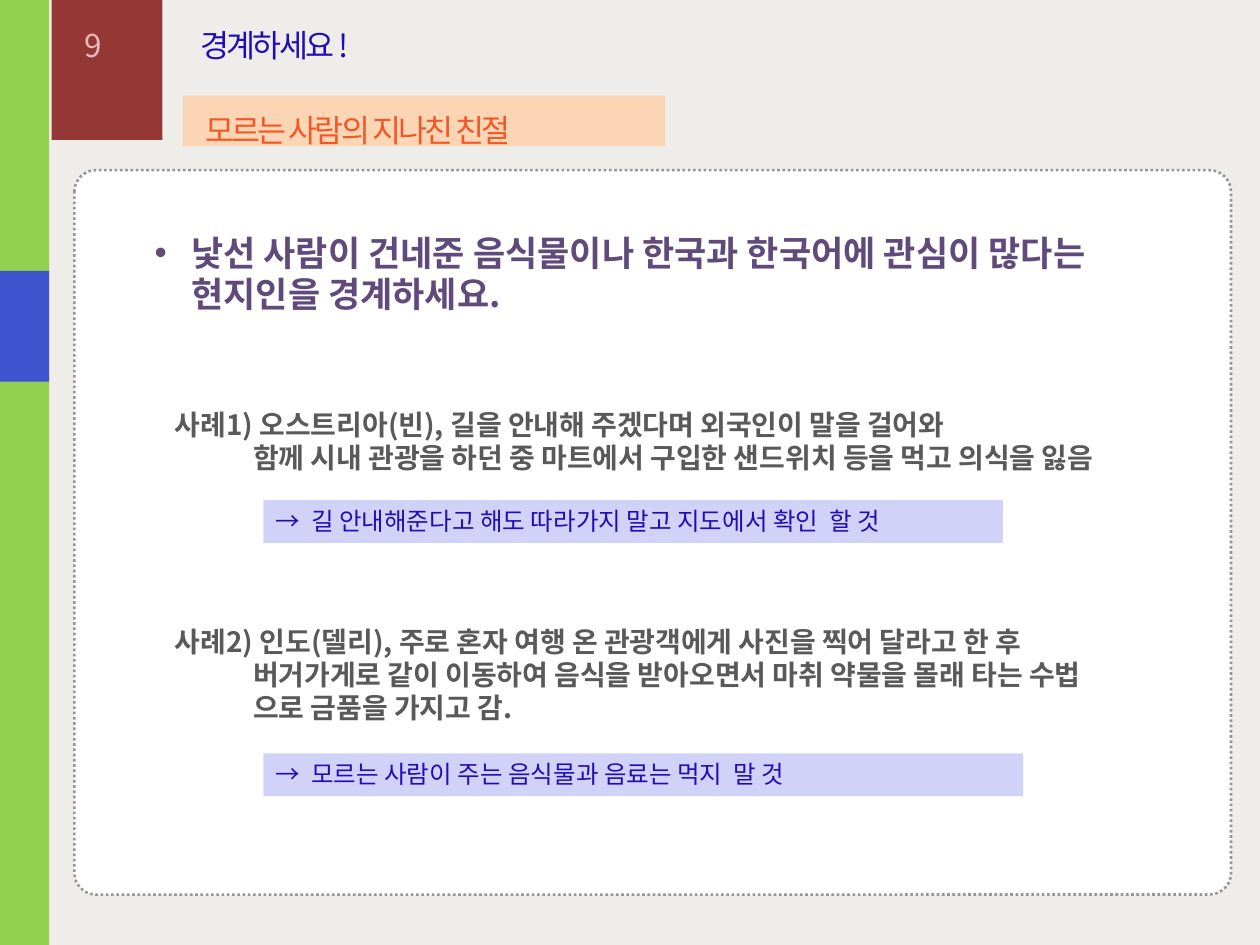
"""Build a travel safety slide about overly friendly strangers."""
from dataclasses import dataclass

from lxml.etree import SubElement
from pptx import Presentation
from pptx.dml.color import RGBColor
from pptx.enum.dml import MSO_LINE
from pptx.enum.shapes import MSO_SHAPE
from pptx.enum.text import MSO_ANCHOR, MSO_AUTO_SIZE, PP_ALIGN
from pptx.oxml.ns import qn
from pptx.util import Inches, Pt


@dataclass(frozen=True)
class Theme:
    """Hold the colours, type sizes and font of the slide."""
    font: str = "Noto Sans CJK KR"
    background: str = "EFEDE9"
    panel: str = "FFFFFF"
    panel_line: str = "969696"
    sidebar: str = "92D050"
    sidebar_mark: str = "2D36EF"
    number_block: str = "953735"
    number: str = "E6B9B8"
    accent: str = "210DB3"
    subtitle_band: str = "FCD5B5"
    subtitle: str = "F15727"
    warning: str = "604A7B"
    case: str = "595959"
    advice_band: str = "D1D2F7"
    heading_size: int = 18
    warning_size: int = 20
    case_size: int = 16
    advice_size: int = 14
    line_height: float = 1.18
    tracking: int = -150


THEME = Theme()


def apply_format(target, values):
    """Set each named attribute on the target."""
    for name, value in values.items():
        setattr(target, name, value)


def add_block(slide, box, color, kind=MSO_SHAPE.RECTANGLE):
    """Add a flat filled shape without outline or shadow."""
    shape = slide.shapes.add_shape(kind, *map(Inches, box))
    shape.shadow.inherit = False
    shape.fill.solid()
    shape.fill.fore_color.rgb = RGBColor.from_string(color)
    shape.line.fill.background()
    return shape


def add_panel(slide, box):
    """Add the rounded content panel with its dotted outline."""
    panel = add_block(slide, box, THEME.panel, MSO_SHAPE.ROUNDED_RECTANGLE)
    panel.adjustments[0] = 0.03
    panel.line.color.rgb = RGBColor.from_string(THEME.panel_line)
    apply_format(panel.line, {"width": Pt(1.5), "dash_style": MSO_LINE.ROUND_DOT})


def set_transparency(shape, opacity):
    """Make a solid fill partly transparent."""
    color = shape.fill._xPr.find(qn("a:solidFill"))[0]
    SubElement(color, qn("a:alpha"), val=str(opacity * 1000))


def set_indent(paragraph, left, first=0, bullet=None):
    """Set the margins of a paragraph and its optional bullet."""
    properties = paragraph._p.get_or_add_pPr()
    properties.set("marL", str(Inches(left)))
    properties.set("indent", str(Inches(first)))
    if bullet:
        SubElement(properties, qn("a:buFont"), typeface="Arial")
        SubElement(properties, qn("a:buChar"), char=bullet)


def write_lines(shape, lines, size, color, bold=False, wrap=True, tracking=0):
    """Write one paragraph per line and return the paragraphs."""
    frame = shape.text_frame
    apply_format(frame, {
        "word_wrap": wrap,
        "auto_size": MSO_AUTO_SIZE.SHAPE_TO_FIT_TEXT,
        "vertical_anchor": MSO_ANCHOR.TOP,
    })
    frame.text = "\n".join(lines)
    for paragraph in frame.paragraphs:
        apply_format(paragraph, {
            "alignment": PP_ALIGN.LEFT,
            "line_spacing": Pt(size * THEME.line_height),
        })
        run = paragraph.runs[0]
        apply_format(run.font, {"name": THEME.font, "size": Pt(size), "bold": bold})
        run.font.color.rgb = RGBColor.from_string(color)
        properties = run._r.get_or_add_rPr()
        SubElement(properties, qn("a:ea"), typeface=THEME.font)
        if tracking:
            properties.set("spc", str(tracking))
    return frame.paragraphs


def add_text(slide, box, lines, size, color, **options):
    """Add a text box and return its paragraphs."""
    shape = slide.shapes.add_textbox(*map(Inches, box))
    return write_lines(shape, lines, size, color, **options)


def add_heading(slide, box, text, color):
    """Add a tightly tracked single-line heading."""
    add_text(slide, box, [text], THEME.heading_size, color,
             wrap=False, tracking=THEME.tracking)


def add_warning(slide, box, text):
    """Add the bulleted main warning."""
    paragraph, = add_text(slide, box, [text], THEME.warning_size,
                          THEME.warning, bold=True)
    set_indent(paragraph, 0.29, -0.29, "•")


def add_case(slide, box, lines):
    """Add a case whose later lines align after its label."""
    paragraphs = add_text(slide, box, lines, THEME.case_size, THEME.case, bold=True)
    for paragraph in paragraphs[1:]:
        set_indent(paragraph, 0.62)


def add_advice(slide, top, width, text):
    """Add a shaded advice band."""
    band = add_block(slide, (2.09, top, width, 0.34), THEME.advice_band)
    write_lines(band, [text], THEME.advice_size, THEME.accent)


def main():
    """Build and save the slide."""
    presentation = Presentation()
    apply_format(presentation, {"slide_width": Inches(10), "slide_height": Inches(7.5)})
    slide = presentation.slides.add_slide(presentation.slide_layouts[6])
    slide.background.fill.solid()
    slide.background.fill.fore_color.rgb = RGBColor.from_string(THEME.background)

    add_panel(slide, (0.59, 1.35, 9.18, 5.75))
    add_block(slide, (0.41, 0, 0.88, 1.11), THEME.number_block)
    add_heading(slide, (0.57, 0.16, 0.56, 0.8), "9", THEME.number)
    add_heading(slide, (1.49, 0.16, 2.84, 0.52), "경계하세요 !", THEME.accent)
    add_block(slide, (1.45, 0.76, 3.83, 0.4), THEME.subtitle_band)
    add_heading(slide, (1.53, 0.84, 3.67, 0.28), "모르는 사람의 지나친 친절", THEME.subtitle)
    add_warning(slide, (1.13, 1.79, 8.03, 0.77),
                "낯선 사람이 건네준 음식물이나 한국과 한국어에 관심이 많다는 현지인을 경계하세요.")
    add_block(slide, (0, 0, 0.39, 7.5), THEME.sidebar)
    add_case(slide, (1.29, 3.19, 8.3, 0.64), [
        "사례1) 오스트리아(빈), 길을 안내해 주겠다며 외국인이 말을 걸어와",
        "함께 시내 관광을 하던 중 마트에서 구입한 샌드위치 등을 먹고 의식을 잃음",
    ])
    add_case(slide, (1.29, 4.91, 8.3, 0.91), [
        "사례2) 인도(델리), 주로 혼자 여행 온 관광객에게 사진을 찍어 달라고 한 후",
        "버거가게로 같이 이동하여 음식을 받아오면서 마취 약물을 몰래 타는 수법",
        "으로 금품을 가지고 감.",
    ])
    add_advice(slide, 5.98, 6.03, "→  모르는 사람이 주는 음식물과 음료는 먹지  말 것")
    add_advice(slide, 3.97, 5.87, "→  길 안내해준다고 해도 따라가지 말고 지도에서 확인  할 것")
    mark = add_block(slide, (0, 2.15, 0.39, 0.88), THEME.sidebar_mark)
    set_transparency(mark, 80)
    presentation.save("out.pptx")


if __name__ == "__main__":
    main()
